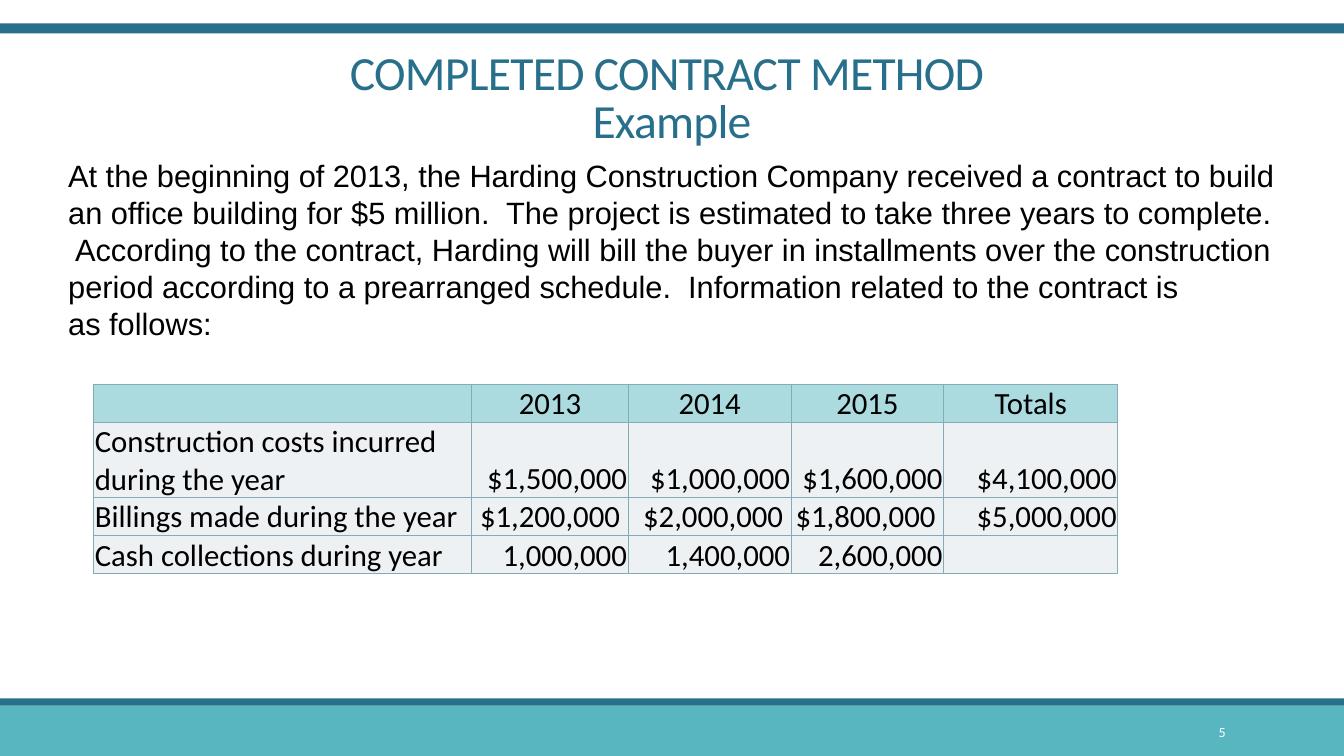
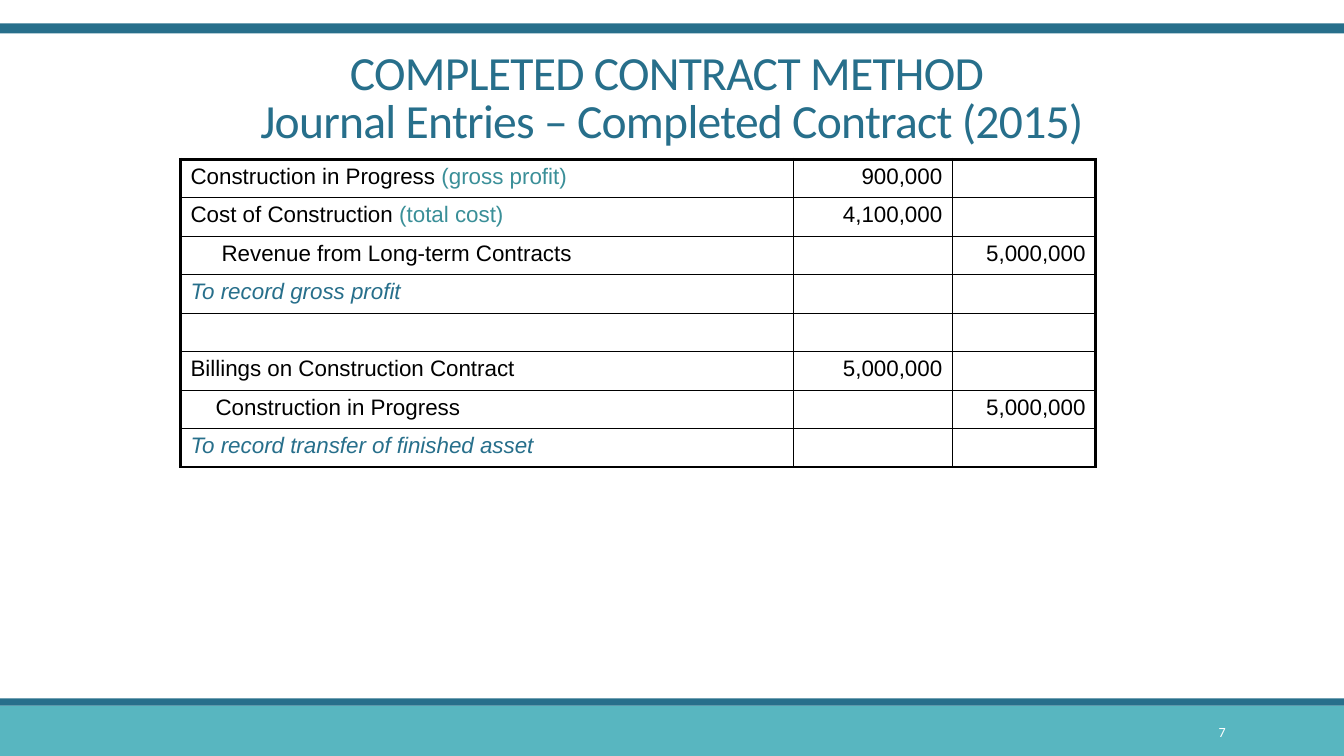
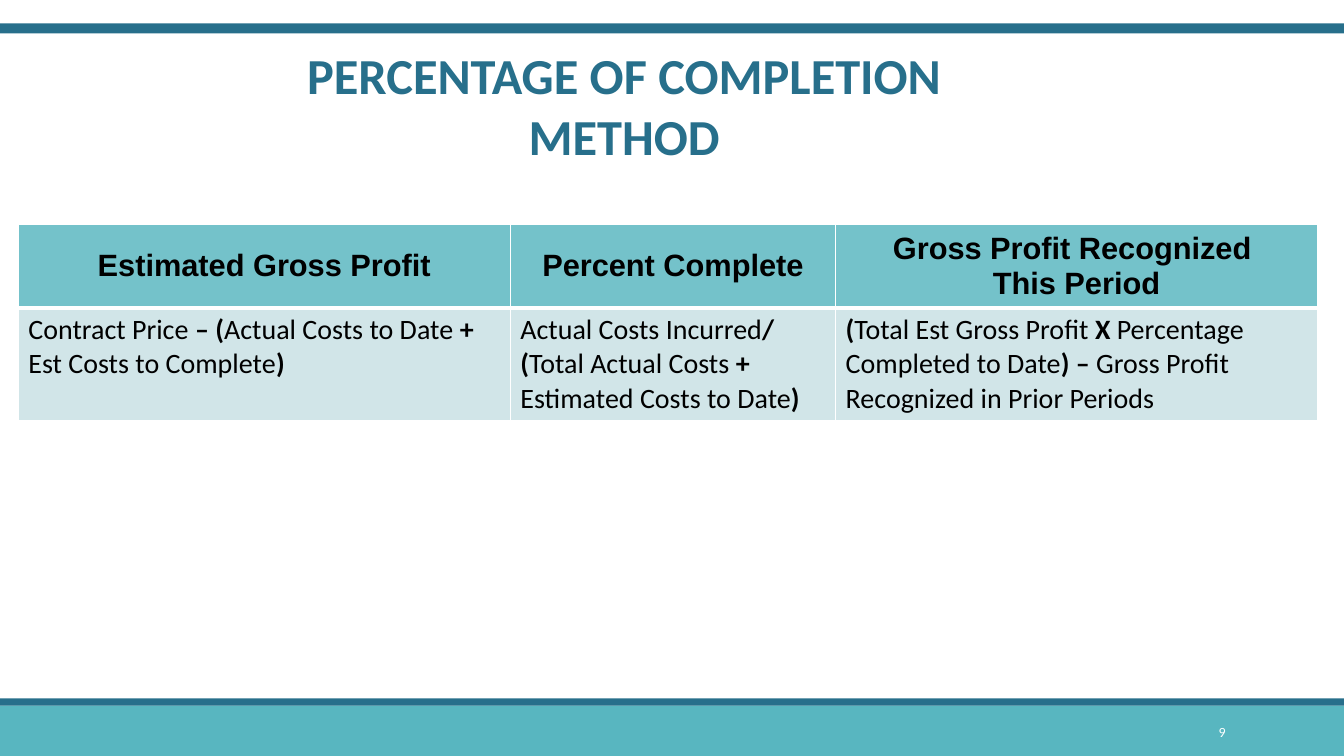
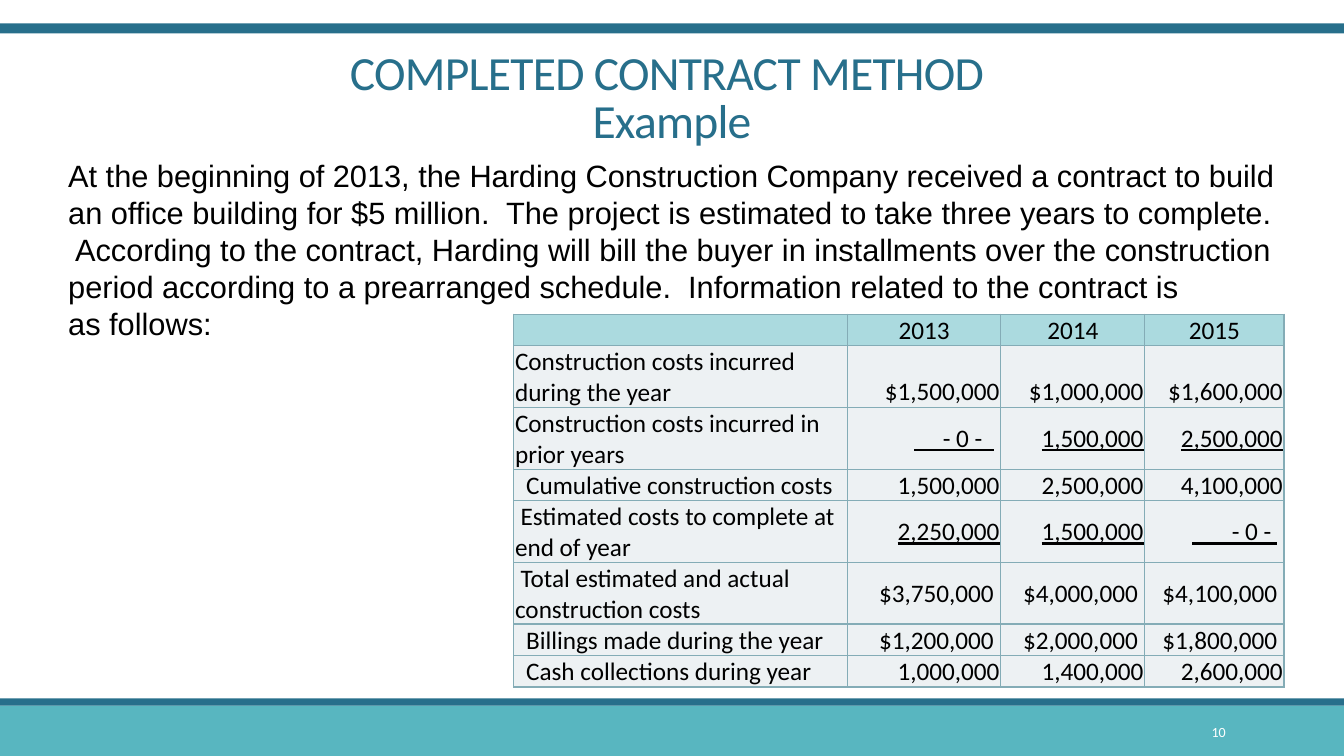
from copy import deepcopy
from dataclasses import dataclass

from lxml.etree import SubElement
from pptx import Presentation
from pptx.dml.color import RGBColor
from pptx.enum.shapes import MSO_SHAPE
from pptx.enum.text import MSO_ANCHOR, MSO_AUTO_SIZE, PP_ALIGN
from pptx.oxml.ns import qn
from pptx.util import Cm, Pt


@dataclass(frozen=True)
class Theme:
    heading_font: str = "Calibri"
    body_font: str = "Arial"
    black: str = "000000"
    white: str = "FFFFFF"
    navy: str = "276F8B"
    teal: str = "58B6C0"
    hint: str = "3A8F98"
    grid: str = "84ACB6"
    grid_header: str = "ABDADF"
    grid_body: str = "EDF1F3"
    formula_header: str = "74C2CA"
    formula_body: str = "D1E5E8"
    title_size: int = 34
    large_title_size: int = 36
    body_size: int = 22
    formula_size: int = 20
    small_table_size: int = 18
    journal_size: int = 16
    number_size: int = 10


THEME = Theme()
SLIDE_WIDTH, SLIDE_HEIGHT = 33.87, 19.05
TITLE_BOX = (0, 1.17, SLIDE_WIDTH, 3.18)
LARGE_TITLE_BOX = (5.28, 0.99, 20.9, 1.8)
BODY_BOX = (1.47, 3.81, 31.04, 4.95)
NUMBER_BOX = (27.51, 17.93, 3.63, 1.02)
BANDS = [
    (0.59, 0.25, THEME.navy),
    (17.6, 0.18, THEME.navy),
    (17.78, 1.27, THEME.teal),
]

BOLD = {"bold": True}
UNDERLINED = {"underline": True}
HINT = {"color": THEME.hint}
NOTE = {"color": THEME.navy, "italic": True}

EXAMPLE_TITLE = "COMPLETED CONTRACT METHOD \vExample"
JOURNAL_TITLE = "COMPLETED CONTRACT METHOD \vJournal Entries – Completed Contract (2015)"
PERCENTAGE_TITLE = "PERCENTAGE OF COMPLETION METHOD"
EXAMPLE_TEXT = (
    "At the beginning of 2013, the Harding Construction Company received a contract "
    "to build an office building for $5 million.  The project is estimated to take "
    "three years to complete.  According to the contract, Harding will bill the buyer "
    "in installments over the construction period according to a prearranged schedule.  "
    "Information related to the contract is \vas follows:"
)

CONTRACT_SUMMARY = {
    "position": (2.36, 9.68),
    "columns": [9.53, 3.94, 4.11, 3.84, 4.39],
    "heights": [0.95, 1.89, 0.95, 0.95],
    "size": THEME.body_size,
    "rows": [
        ["", "2013", "2014", "2015", "Totals"],
        ["Construction costs incurred during the year",
         "$1,500,000", "$1,000,000", "$1,600,000", "$4,100,000"],
        ["Billings made during the year",
         "$1,200,000 ", "$2,000,000 ", "$1,800,000 ", "$5,000,000"],
        ["Cash collections during year", "1,000,000", "1,400,000", "2,600,000", ""],
    ],
}

COST_SCHEDULE = {
    "position": (12.95, 7.92),
    "columns": [8.41, 3.86, 3.63, 3.51],
    "heights": [0.78, 1.55, 1.55, 0.78, 1.55, 1.55, 0.78, 0.78],
    "size": THEME.small_table_size,
    "indents": {3: 0.28, 4: 0.14, 5: 0.14, 6: 0.28, 7: 0.28},
    "rows": [
        ["", "2013", "2014", "2015"],
        ["Construction costs incurred during the year",
         "$1,500,000", "$1,000,000", "$1,600,000"],
        ["Construction costs incurred in prior years",
         [("     - 0 -  ", UNDERLINED), (" ", {})],
         [("1,500,000", UNDERLINED)], [("2,500,000", UNDERLINED)]],
        ["Cumulative construction costs", "1,500,000", "2,500,000", "4,100,000"],
        ["Estimated costs to complete at end of year",
         [("2,250,000", UNDERLINED)], [("1,500,000", UNDERLINED)],
         [("       - 0 - ", UNDERLINED), (" ", {})]],
        ["Total estimated and actual construction costs",
         "$3,750,000 ", "$4,000,000 ", "$4,100,000 "],
        ["Billings made during the year", "$1,200,000 ", "$2,000,000 ", "$1,800,000 "],
        ["Cash collections during year", "1,000,000", "1,400,000", "2,600,000"],
    ],
}

JOURNAL = {
    "position": (4.55, 4.01),
    "columns": [15.44, 4.01, 3.61],
    "heights": [0.97] * 8,
    "size": THEME.journal_size,
    "indents": {2: 0.78, 6: 0.63},
    "rows": [
        [[("Construction in Progress ", {}), ("(gross profit)", HINT)], "900,000", ""],
        [[("Cost of Construction ", {}), ("(total cost)", HINT)], "4,100,000", ""],
        ["Revenue from Long-term Contracts", "", "5,000,000"],
        [[("To record gross profit", NOTE)], "", ""],
        ["", "", ""],
        ["Billings on Construction Contract", "5,000,000", ""],
        ["Construction in Progress", "", "5,000,000"],
        [[("To record transfer of finished asset", NOTE)], "", ""],
    ],
}

FORMULAS = {
    "position": (0.46, 5.66),
    "columns": [12.4, 8.2, 12.14],
    "heights": [2.1, 2.8],
    "size": THEME.formula_size,
    "rows": [
        [[("Estimated Gross Profit", BOLD)], [("Percent Complete", BOLD)],
         [("Gross Profit Recognized \vThis Period", BOLD)]],
        [[("Contract Price ", {}), ("– (", BOLD), ("Actual Costs to Date ", {}),
          ("+", BOLD), (" Est Costs to Complete", {}), (")", BOLD)],
         [("Actual Costs Incurred", {}), ("/\v(", BOLD), ("Total Actual Costs ", {}),
          ("+", BOLD), (" Estimated Costs to Date", {}), (")", BOLD)],
         [("(", BOLD), ("Total Est Gross Profit ", {}), ("X", BOLD),
          (" Percentage Completed to Date", {}), (") –", BOLD),
          (" Gross Profit Recognized in Prior Periods", {})]],
    ],
}


def lengths(values):
    return [Cm(value) for value in values]


def write(paragraph, content, font, size, color=THEME.black, align=PP_ALIGN.LEFT):
    paragraph.alignment = align
    if not content:
        SubElement(paragraph._p, qn("a:endParaRPr"), sz=str(size * 100))
        return
    for text, style in [(content, {})] if isinstance(content, str) else content:
        for index, part in enumerate(text.split("\v")):
            if index:
                paragraph.add_line_break()
            run = paragraph.add_run()
            run.text = part
            run.font.name = font
            run.font.size = Pt(size)
            run.font.bold = style.get("bold", False)
            run.font.italic = style.get("italic", False)
            run.font.underline = style.get("underline", False)
            run.font.color.rgb = RGBColor.from_string(style.get("color", color))
    properties = next(paragraph._p.iter(qn("a:rPr")))
    for line_break in paragraph._p.findall(qn("a:br")):
        line_break.append(deepcopy(properties))


def place(shape, box):
    shape.left, shape.top, shape.width, shape.height = lengths(box)


def add_text(slide, box, content, *style):
    text_frame = slide.shapes.add_textbox(*lengths(box)).text_frame
    text_frame.word_wrap = True
    text_frame.vertical_anchor = MSO_ANCHOR.MIDDLE
    write(text_frame.paragraphs[0], content, *style)


def add_bands(slide, layout):
    for placeholder in list(layout.placeholders)[1:]:
        layout.shapes.element.remove(placeholder.element)
    bands = []
    for top, height, color in BANDS:
        band = slide.shapes.add_shape(
            MSO_SHAPE.RECTANGLE, *lengths((0, top, SLIDE_WIDTH, height)))
        band.shadow.inherit = False
        band.fill.solid()
        band.fill.fore_color.rgb = RGBColor.from_string(color)
        band.line.fill.background()
        bands.append(band)
    for band in bands:
        layout.shapes.element.insert(2, band.element)


def set_title(slide, text, large):
    title = slide.shapes.title
    place(title, LARGE_TITLE_BOX if large else TITLE_BOX)
    text_frame = title.text_frame
    text_frame.word_wrap = True
    text_frame.auto_size = MSO_AUTO_SIZE.NONE
    text_frame.vertical_anchor = MSO_ANCHOR.TOP
    paragraph = text_frame.paragraphs[0]
    size = THEME.large_title_size if large else THEME.title_size
    write(paragraph, [(text, BOLD if large else {})], THEME.heading_font, size,
          THEME.navy, PP_ALIGN.CENTER)
    if not large:
        paragraph.line_spacing = 0.85
        for properties in paragraph._p.iter(qn("a:rPr")):
            properties.set("spc", "-50")


def set_borders(cell, color, left, right, top, bottom):
    properties = cell._tc.get_or_add_tcPr()
    for side, width in zip("LRTB", (left, right, top, bottom)):
        line = SubElement(properties, qn(f"a:ln{side}"), w=str(Pt(width)))
        fill = SubElement(line, qn("a:solidFill"))
        SubElement(fill, qn("a:srgbClr"), val=color)


def set_fill(cell, color):
    cell.fill.solid()
    cell.fill.fore_color.rgb = RGBColor.from_string(color)


def add_table(slide, data, format_cell):
    rows, columns, heights = data["rows"], data["columns"], data["heights"]
    box = (*data["position"], sum(columns), sum(heights))
    table = slide.shapes.add_table(len(rows), len(columns), *lengths(box)).table
    table.first_row = table.horz_banding = False
    for column, width in zip(table.columns, columns):
        column.width = Cm(width)
    for row, height in zip(table.rows, heights):
        row.height = Cm(height)
    for row_index, row in enumerate(rows):
        for column_index, content in enumerate(row):
            cell = table.cell(row_index, column_index)
            font, align = format_cell(cell, row_index, column_index)
            paragraph = cell.text_frame.paragraphs[0]
            size = THEME.body_size if font == THEME.body_font and data is FORMULAS else data["size"]
            write(paragraph, content, font, size, THEME.black, align)
            if column_index == 0 and row_index in data.get("indents", {}):
                properties = paragraph._p.get_or_add_pPr()
                properties.set("marL", "0")
                properties.set("indent", str(Cm(data["indents"][row_index])))


def format_schedule(cell, row, column):
    set_borders(cell, THEME.grid, 1, 1, 1, 1)
    set_fill(cell, THEME.grid_body if row else THEME.grid_header)
    cell.margin_left = cell.margin_right = cell.margin_top = Cm(0.03)
    cell.margin_bottom = 0
    at_bottom = row <= 1 and column > 0
    cell.vertical_anchor = MSO_ANCHOR.BOTTOM if at_bottom else MSO_ANCHOR.MIDDLE
    if row == 0:
        return THEME.heading_font, PP_ALIGN.CENTER
    return THEME.heading_font, PP_ALIGN.RIGHT if column else PP_ALIGN.LEFT


def format_journal(cell, row, column):
    left = 2.25 if column == 0 else 1
    right = 2.25 if column == len(JOURNAL["columns"]) - 1 else 1
    top = 2.25 if row == 0 else 1
    set_borders(cell, THEME.black, left, right, top, 1)
    cell.fill.background()
    cell.text_frame.paragraphs[0].space_before = Pt(1)
    return THEME.body_font, PP_ALIGN.RIGHT if column else PP_ALIGN.LEFT


def format_formula(cell, row, column):
    set_borders(cell, THEME.white, 1, 1, 3 if row else 1, 1 if row else 3)
    set_fill(cell, THEME.formula_body if row else THEME.formula_header)
    if row:
        return THEME.heading_font, PP_ALIGN.LEFT
    cell.vertical_anchor = MSO_ANCHOR.MIDDLE
    return THEME.body_font, PP_ALIGN.CENTER


SLIDES = [
    ("5", EXAMPLE_TITLE, EXAMPLE_TEXT, CONTRACT_SUMMARY, format_schedule),
    ("7", JOURNAL_TITLE, "", JOURNAL, format_journal),
    ("9", PERCENTAGE_TITLE, "", FORMULAS, format_formula),
    ("10", EXAMPLE_TITLE, EXAMPLE_TEXT, COST_SCHEDULE, format_schedule),
]


def main():
    presentation = Presentation()
    presentation.slide_width = Cm(SLIDE_WIDTH)
    presentation.slide_height = Cm(SLIDE_HEIGHT)
    layout = presentation.slide_layouts.get_by_name("Title Only")
    for number, title, text, table, format_cell in SLIDES:
        slide = presentation.slides.add_slide(layout)
        if len(presentation.slides) == 1:
            add_bands(slide, layout)
        set_title(slide, title, title == PERCENTAGE_TITLE)
        if text:
            add_text(slide, BODY_BOX, text, THEME.body_font, THEME.body_size)
        add_table(slide, table, format_cell)
        add_text(slide, NUMBER_BOX, number, THEME.heading_font, THEME.number_size,
                 THEME.white, PP_ALIGN.RIGHT)
    presentation.save("out.pptx")


if __name__ == "__main__":
    main()
